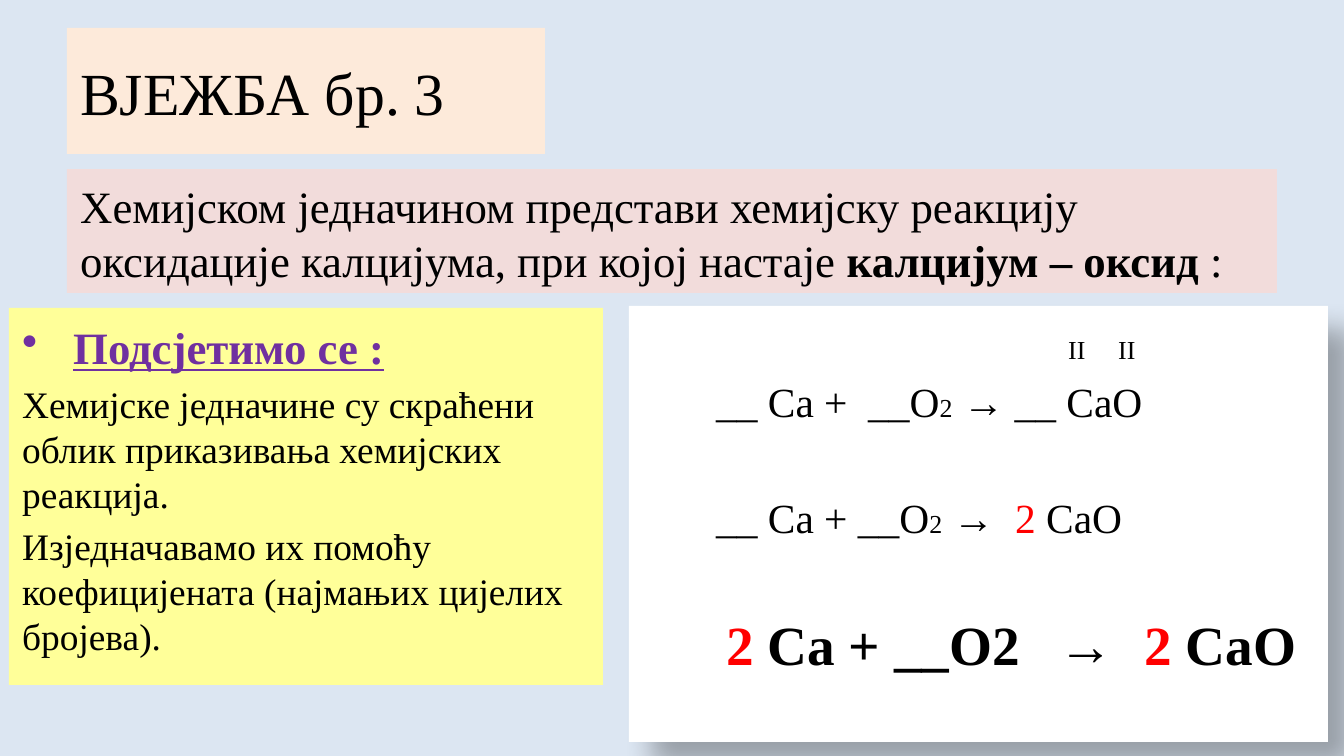
from dataclasses import dataclass

from lxml import etree
from pptx import Presentation
from pptx.dml.color import RGBColor
from pptx.enum.text import MSO_ANCHOR
from pptx.oxml.ns import qn
from pptx.util import Emu, Pt

TOP, MIDDLE, BOTTOM = MSO_ANCHOR.TOP, MSO_ANCHOR.MIDDLE, MSO_ANCHOR.BOTTOM
EMU_PER_PX = 914400 / 134.4
FONT = "Times New Roman"
COLORS = {
    "background": "DCE6F2", "title": "FDEADA", "task": "F2DCDB",
    "reminder": "FFFF99", "equations": "FFFFFF", "shadow": "000000",
    "text": "000000", "heading": "7030A0", "coefficient": "FF0000",
}
EQUATION, SMALL, FINAL = 22.2, 13.9, 29.6


@dataclass(frozen=True)
class Span:
    text: str
    size: float
    color: str = "text"
    bold: bool = False
    underline: bool = False


@dataclass(frozen=True)
class Line:
    spans: tuple[Span, ...]
    space_before: float = 0
    tabs: tuple[int, ...] = ()
    bullet_indent: int = 0


@dataclass(frozen=True)
class Panel:
    left: int
    top: int
    width: int
    height: int
    fill: str
    lines: tuple[Line, ...]
    anchor: MSO_ANCHOR = TOP
    inset_top: int = 7
    shadow: bool = False


def px(length: int) -> Emu:
    return Emu(round(length * EMU_PER_PX))


def rgb(name: str) -> RGBColor:
    return RGBColor.from_string(COLORS[name])


def add_text(paragraph, text: str, *, size: float, color: str = "text",
             bold: bool = False, underline: bool = False) -> None:
    run = paragraph.add_run()
    run.text = text
    font = run.font
    font.name, font.size = FONT, Pt(size)
    font.bold, font.underline = bold, underline
    font.color.rgb = rgb(color)


def format_line(paragraph, line: Line) -> None:
    """Set the spacing, bullet and tab stops of a paragraph."""
    paragraph.space_before = Pt(line.space_before)
    properties = paragraph._p.get_or_add_pPr()
    if line.bullet_indent:
        indent = px(line.bullet_indent)
        properties.set("marL", str(indent))
        properties.set("indent", str(-indent))
        etree.SubElement(properties, qn("a:buChar"), char="•")
    if line.tabs:
        stops = etree.SubElement(properties, qn("a:tabLst"))
        for position in line.tabs:
            etree.SubElement(stops, qn("a:tab"), pos=str(px(position)), algn="l")


def add_shadow(box) -> None:
    effects = etree.SubElement(box._element.spPr, qn("a:effectLst"))
    shadow = etree.SubElement(
        effects, qn("a:outerShdw"), blurRad=str(Pt(15)), dist=str(Pt(18)),
        dir=str(45 * 60000), algn="tl", rotWithShape="0")
    color = etree.SubElement(shadow, qn("a:srgbClr"), val=COLORS["shadow"])
    etree.SubElement(color, qn("a:alpha"), val="30000")


def draw_panel(slide, panel: Panel) -> None:
    box = slide.shapes.add_textbox(
        px(panel.left), px(panel.top), px(panel.width), px(panel.height))
    box.fill.solid()
    box.fill.fore_color.rgb = rgb(panel.fill)
    if panel.shadow:
        add_shadow(box)
    frame = box.text_frame
    frame.word_wrap = True
    frame.vertical_anchor = panel.anchor
    frame.margin_top = px(panel.inset_top)
    for index, line in enumerate(panel.lines):
        paragraph = frame.add_paragraph() if index else frame.paragraphs[0]
        format_line(paragraph, line)
        for span in line.spans:
            add_text(paragraph, span.text, size=span.size, color=span.color,
                     bold=span.bold, underline=span.underline)


PANELS = (
    Panel(9, 308, 594, 377, "reminder", (
        Line((Span("Подсјетимо се :", 24, "heading", True, True),),
             bullet_indent=51),
        Line((Span("Хемијске једначине су скраћени облик приказивања "
                   "хемијских реакција.", 20),), 4),
        Line((Span("Изједначавамо их помоћу коефицијената "
                   "(најмањих цијелих бројева).", 20),), 4),
    ), inset_top=12),
    Panel(67, 169, 1210, 124, "task", (
        Line((Span("Хемијском једначином представи хемијску реакцију "
                   "оксидације калцијума, при којој настаје ", 24),
              Span("калцијум – оксид ", 24, bold=True),
              Span(":", 24))),
    ), BOTTOM),
    Panel(67, 28, 478, 126, "title", (
        Line((Span("ВЈЕЖБА бр. 3", 32),)),
    ), MIDDLE),
    Panel(629, 306, 699, 436, "equations", (
        Line((Span("\t", EQUATION), Span("II\tII", SMALL)), tabs=(426, 476)),
        Line((Span("\t__ Ca +\t__O", EQUATION), Span("2", SMALL),
              Span(" → __ CaO", EQUATION)), 4.4, (74, 226)),
        Line((Span("\t__ Ca + __O", EQUATION), Span("2", SMALL),
              Span(" →\t", EQUATION), Span("2 ", EQUATION, "coefficient"),
              Span("CaO", EQUATION)), 35.5, (74, 373)),
        Line((Span("\t", EQUATION), Span("2 ", FINAL, "coefficient", True),
              Span("Ca + __O2\t→\t", FINAL, bold=True),
              Span("2 ", FINAL, "coefficient", True),
              Span("CaO", FINAL, bold=True)), 37, (84, 416, 502)),
    ), inset_top=12, shadow=True),
)


def main() -> None:
    presentation = Presentation()
    presentation.slide_width, presentation.slide_height = px(1344), px(756)
    slide = presentation.slides.add_slide(presentation.slide_layouts[6])
    slide.background.fill.solid()
    slide.background.fill.fore_color.rgb = rgb("background")
    for panel in PANELS:
        draw_panel(slide, panel)
    presentation.save("out.pptx")


if __name__ == "__main__":
    main()
